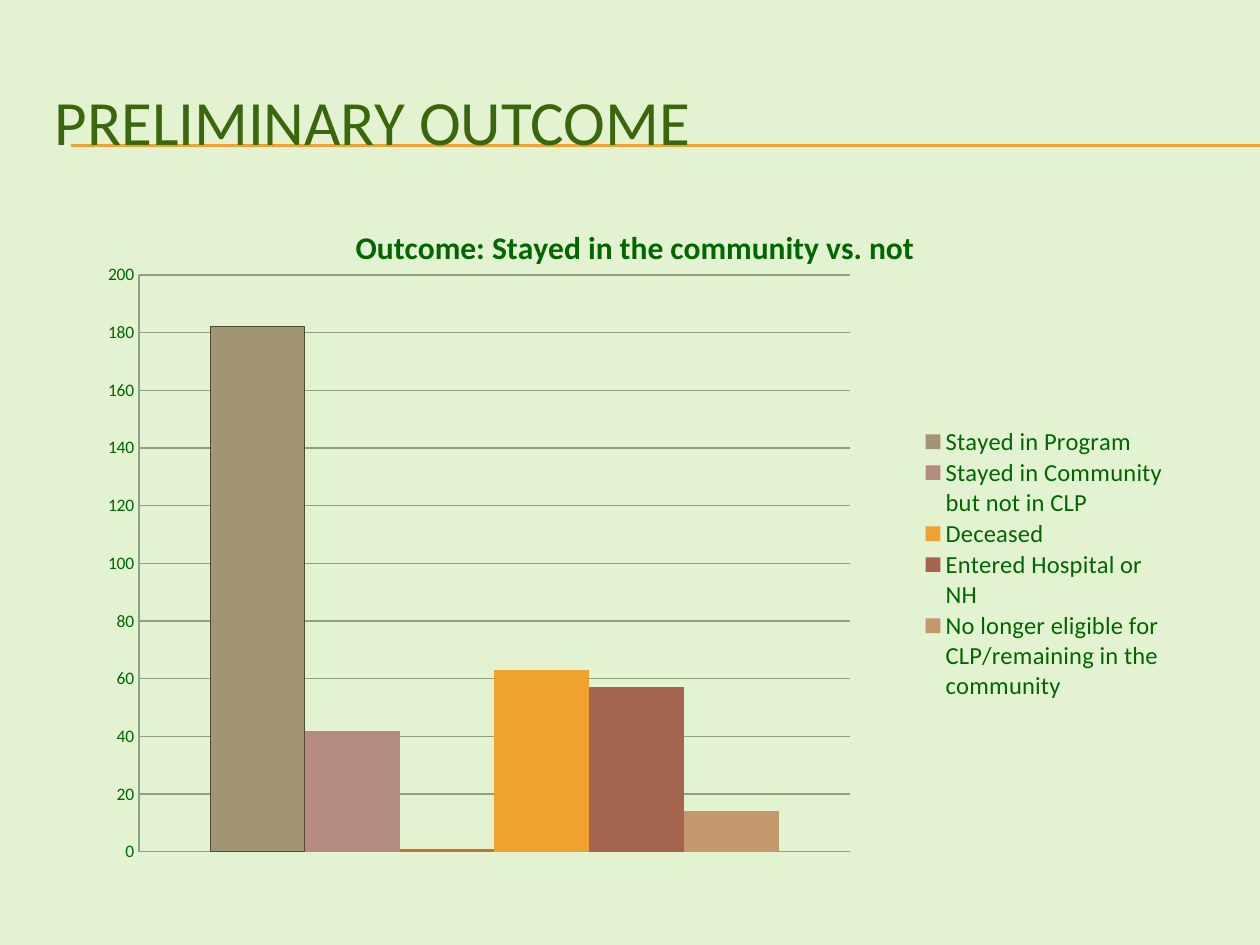
from lxml import etree
from pptx import Presentation
from pptx.chart.data import CategoryChartData
from pptx.dml.color import RGBColor
from pptx.enum.chart import XL_CHART_TYPE, XL_LEGEND_POSITION, XL_TICK_MARK
from pptx.enum.shapes import MSO_CONNECTOR
from pptx.enum.text import MSO_ANCHOR, PP_ALIGN
from pptx.oxml import parse_xml
from pptx.oxml.ns import nsdecls, qn
from pptx.util import Pt

BACKGROUND = RGBColor(0xE3, 0xF3, 0xD1)
TITLE_GREEN = RGBColor(0x3A, 0x66, 0x0E)
CHART_GREEN = RGBColor(0x00, 0x66, 0x00)
GRID_GREEN = RGBColor(0x8A, 0xA0, 0x88)
BAR_OUTLINE = RGBColor(0x50, 0x4A, 0x38)
ORANGE = RGBColor(0xF0, 0xA2, 0x2E)
CHART_LEFT, CHART_TOP, CHART_WIDTH, CHART_HEIGHT = 84, 210, 1092, 662
OUTCOMES = [
    ("Stayed in Program", 182, RGBColor(0xA1, 0x95, 0x74)),
    ("Stayed in Community but not in CLP", 42, RGBColor(0xB5, 0x8B, 0x80)),
    ("Series 3", 1, RGBColor(0xC1, 0x75, 0x29)),
    ("Deceased", 63, ORANGE),
    ("Entered Hospital or NH", 57, RGBColor(0xA5, 0x64, 0x4E)),
    ("No longer eligible for CLP/remaining in the community", 14, RGBColor(0xC3, 0x98, 0x6D)),
]


def px(length):
    return round(length * 914400 / 126)


def chart_layout(left, top, width, height, target=""):
    return parse_xml(
        f'<c:layout {nsdecls("c")}><c:manualLayout>{target}'
        '<c:xMode val="edge"/><c:yMode val="edge"/>'
        f'<c:x val="{(left - CHART_LEFT) / CHART_WIDTH}"/>'
        f'<c:y val="{(top - CHART_TOP) / CHART_HEIGHT}"/>'
        f'<c:w val="{width / CHART_WIDTH}"/><c:h val="{height / CHART_HEIGHT}"/>'
        '</c:manualLayout></c:layout>'
    )


deck = Presentation()
deck.slide_width, deck.slide_height = px(1260), px(945)
page = deck.slides.add_slide(deck.slide_layouts[5])
page.background.fill.solid()
page.background.fill.fore_color.rgb = BACKGROUND

for y in (145, 146):
    rule = page.shapes.add_connector(MSO_CONNECTOR.STRAIGHT, px(71), px(y), px(1260), px(y))
    rule.line.color.rgb = ORANGE
    rule.line.width = Pt(0.75)
    etree.SubElement(rule.element.spPr, qn("a:effectLst"))

title = page.shapes.title
title.element.getparent().append(title.element)
title.left, title.top, title.width, title.height = px(42), px(62), px(1197), px(116)
title.text_frame.text = "PRELIMINARY OUTCOME"
title.text_frame.vertical_anchor = MSO_ANCHOR.MIDDLE
para = title.text_frame.paragraphs[0]
para.alignment = PP_ALIGN.LEFT
font = para.runs[0].font
font.name, font.size = "Calibri", Pt(36)
font.color.rgb = TITLE_GREEN

data = CategoryChartData()
data.categories = ["1"]
for name, count, color in OUTCOMES:
    data.add_series(name, [count])
chart = page.shapes.add_chart(
    XL_CHART_TYPE.COLUMN_CLUSTERED,
    px(CHART_LEFT), px(CHART_TOP), px(CHART_WIDTH), px(CHART_HEIGHT), data
).chart
chart.font.name, chart.font.size = "Calibri", Pt(10)
chart.font.color.rgb = CHART_GREEN

chart.has_title = True
chart.chart_title.text_frame.text = "Outcome: Stayed in the community vs. not"
heading = chart.chart_title.text_frame.paragraphs[0].runs[0].font
heading.name, heading.size, heading.bold = "Calibri", Pt(18), True
heading.color.rgb = CHART_GREEN
title_xml = chart.element.find(".//" + qn("c:title"))
for layout in title_xml.findall(qn("c:layout")):
    title_xml.remove(layout)
title_xml.find(qn("c:tx")).addnext(chart_layout(350, 220, 558, 50))

plot = chart.plots[0]
plot.gap_width, plot.overlap = 150, 0
plot.vary_by_categories = False
for series, (name, count, color) in zip(plot.series, OUTCOMES):
    series.format.fill.solid()
    series.format.fill.fore_color.rgb = color
first_bar = plot.series[0].points[0].format
first_bar.fill.solid()
first_bar.fill.fore_color.rgb = OUTCOMES[0][2]
first_bar.line.color.rgb = BAR_OUTLINE
first_bar.line.width = Pt(0.5)

chart.category_axis.visible = False
axis = chart.value_axis
axis.minimum_scale, axis.maximum_scale, axis.major_unit = 0, 200, 20
axis.major_tick_mark = XL_TICK_MARK.NONE
axis.has_major_gridlines = True
for line in (axis.format.line, axis.major_gridlines.format.line):
    line.color.rgb = GRID_GREEN
    line.width = Pt(0.75)

chart.has_legend = True
legend = chart.legend
legend.position = XL_LEGEND_POSITION.RIGHT
legend.include_in_layout = False
legend.font.name, legend.font.size = "Calibri", Pt(14)
legend.font.color.rgb = CHART_GREEN
legend_xml = chart.element.find(".//" + qn("c:legend"))
for layout in legend_xml.findall(qn("c:layout")):
    legend_xml.remove(layout)
hidden_entry = parse_xml(
    f'<c:legendEntry {nsdecls("c")}><c:idx val="2"/><c:delete val="1"/></c:legendEntry>'
)
legend_xml.find(qn("c:legendPos")).addnext(hidden_entry)
hidden_entry.addnext(chart_layout(918, 426, 252, 276))

plot_area = chart.element.find(".//" + qn("c:plotArea"))
for layout in plot_area.findall(qn("c:layout")):
    plot_area.remove(layout)
plot_area.insert(0, chart_layout(139, 275, 711, 577, '<c:layoutTarget val="inner"/>'))

deck.save("out.pptx")
